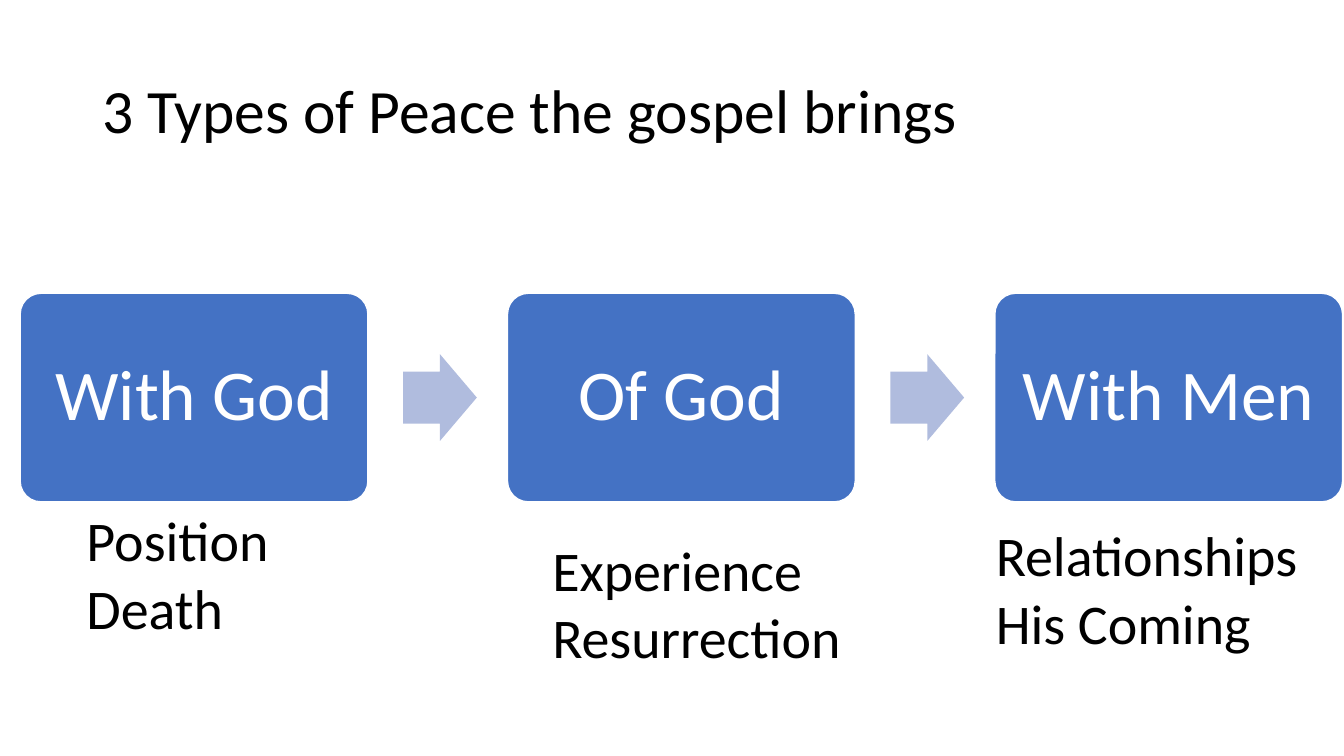
from pptx import Presentation
from pptx.dml.color import RGBColor
from pptx.enum import shapes, text
from pptx.util import Pt

TITLE = "3 Types of Peace the gospel brings"
# heading, caption lines, caption (left, top, width), caption wraps
PEACES = [
    ("With God", ["Position", "Death"], (54.7, 357.8, 146.2), False),
    ("Of God", ["Experience", "Resurrection"], (387.4, 378.7, 223.2), False),
    ("With Men", ["Relationships", "His Coming"], (704.2, 368.6, 241.9), True),
]

SLIDE_W, SLIDE_H = 960, 540
STEP_LEFT, STEP_TOP, STEP_W, STEP_H = 14.4, 209.5, 248.4, 149
STEP_PITCH = 348.1
ARROW_OFFSET, ARROW_W, ARROW_H = 273.6, 52.6, 61.9
CAPTION_H = 104.4
BLUE, PALE_BLUE, WHITE, BLACK = "4472C4", "B0BCDE", "FFFFFF", "000000"

prs = Presentation()
prs.slide_width, prs.slide_height = Pt(SLIDE_W), Pt(SLIDE_H)
slide = prs.slides.add_slide(prs.slide_layouts[6])


def color(hex_value):
    return RGBColor.from_string(hex_value)


def write(shape, lines, size, ink=BLACK, align=text.PP_ALIGN.LEFT,
          anchor=text.MSO_ANCHOR.TOP, spacing=None, inset=None, wrap=True):
    frame = shape.text_frame
    frame.word_wrap = wrap
    frame.vertical_anchor = anchor
    if inset is not None:
        frame.margin_left = frame.margin_right = Pt(inset)
        frame.margin_top = frame.margin_bottom = Pt(inset)
    for i, line in enumerate(lines):
        paragraph = frame.add_paragraph() if i else frame.paragraphs[0]
        paragraph.alignment = align
        paragraph.line_spacing = spacing
        run = paragraph.add_run()
        run.text = line
        run.font.name, run.font.size = "Calibri", Pt(size)
        run.font.color.rgb = color(ink)


def add_text(left, top, width, height, lines, size, **style):
    box = slide.shapes.add_textbox(Pt(left), Pt(top), Pt(width), Pt(height))
    write(box, lines, size, **style)
    return box


def add_block(kind, left, top, width, height, fill, adjustments, line=None):
    block = slide.shapes.add_shape(kind, Pt(left), Pt(top), Pt(width), Pt(height))
    block.shadow.inherit = False
    for i, value in enumerate(adjustments):
        block.adjustments[i] = value
    block.fill.solid()
    block.fill.fore_color.rgb = color(fill)
    if line:
        block.line.color.rgb = color(line)
        block.line.width = Pt(1)
    else:
        block.line.fill.background()
    return block


add_text(66, 28.75, 828, 104.4, [TITLE], 44,
         anchor=text.MSO_ANCHOR.MIDDLE, spacing=0.9)

for i, (heading, caption, place, wraps) in enumerate(PEACES):
    left = STEP_LEFT + i * STEP_PITCH
    step = add_block(shapes.MSO_SHAPE.ROUNDED_RECTANGLE, left, STEP_TOP,
                     STEP_W, STEP_H, BLUE, [0.1], WHITE)
    write(step, [heading], 51, ink=WHITE, align=text.PP_ALIGN.CENTER,
          anchor=text.MSO_ANCHOR.MIDDLE, spacing=0.9, inset=14)
    if i < len(PEACES) - 1:
        add_block(shapes.MSO_SHAPE.RIGHT_ARROW, left + ARROW_OFFSET,
                  STEP_TOP + (STEP_H - ARROW_H) / 2, ARROW_W, ARROW_H,
                  PALE_BLUE, [0.6, 0.5])
    note = add_text(*place, CAPTION_H, caption, 40, wrap=wraps)
    note.text_frame.auto_size = text.MSO_AUTO_SIZE.SHAPE_TO_FIT_TEXT

prs.save("out.pptx")
